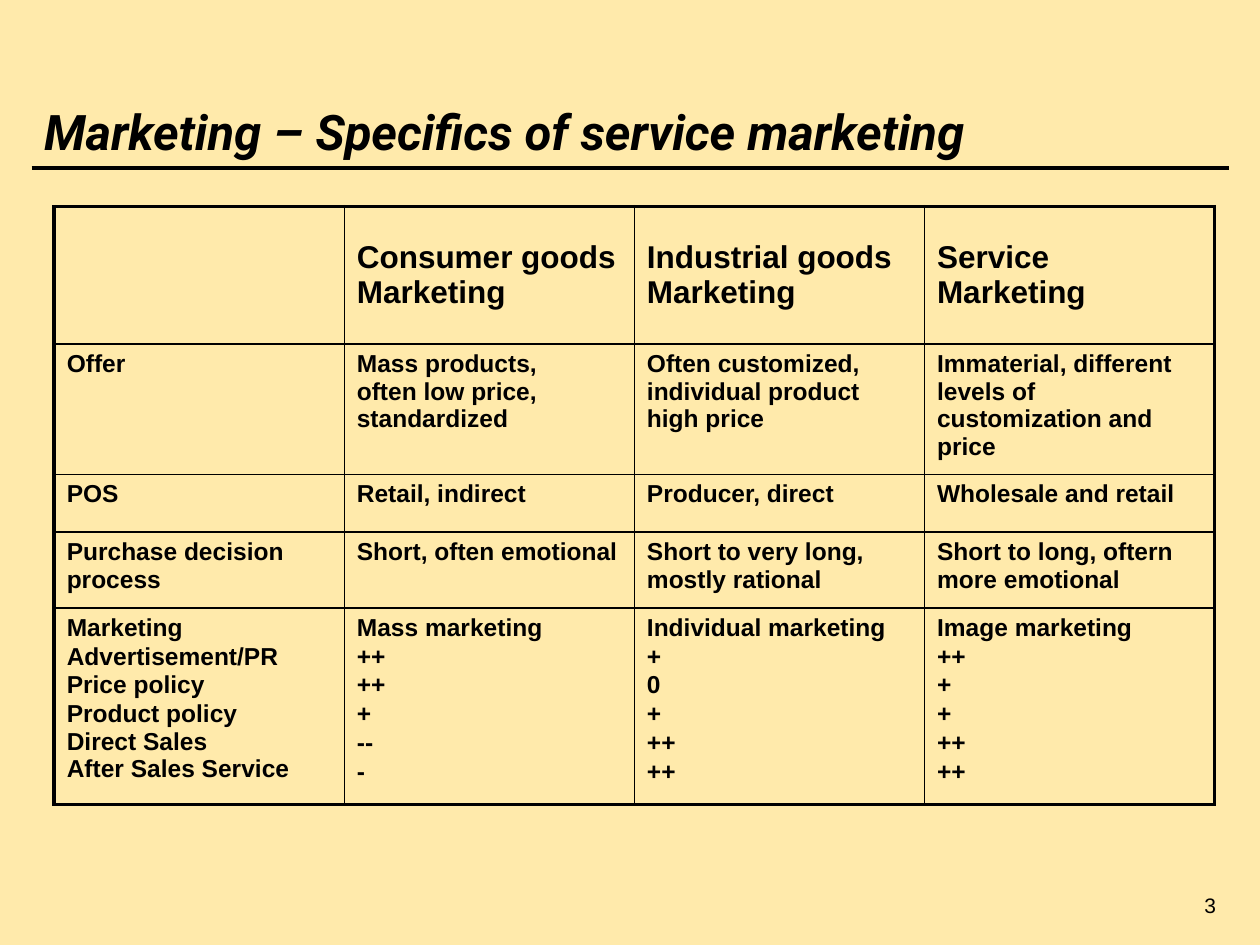
from lxml.etree import SubElement
from pptx import Presentation
from pptx.dml.color import RGBColor
from pptx.enum.shapes import MSO_CONNECTOR
from pptx.enum.text import MSO_ANCHOR, MSO_AUTO_SIZE, PP_ALIGN
from pptx.oxml.ns import qn
from pptx.util import Inches, Pt

BLACK = RGBColor(0x00, 0x00, 0x00)
CREAM = RGBColor(0xFF, 0xEA, 0xAB)
OUTER_WIDTH, INNER_WIDTH = Pt(2.25), Pt(1)

TITLE_FONT = {"name": "Roboto", "size": Pt(28), "bold": True, "italic": True}
HEADER_FONT = {"name": "Arial", "size": Pt(18), "bold": True}
BODY_FONT = {"name": "Arial", "size": Pt(14), "bold": True}
NUMBER_FONT = {"name": "Arial", "size": Pt(12), "bold": False}

ROW_HEIGHTS = [1.09, 0.72, 0.46, 0.6, 1.56]
# "\n" starts a paragraph, "\v" breaks a line inside one.
ROWS = [
    ["", "Consumer goods Marketing", "Industrial goods Marketing", "Service Marketing"],
    ["Offer",
     "Mass products, \voften low price, standardized",
     "Often customized,\vindividual product high price",
     "Immaterial, different levels of customization and price"],
    ["POS", "Retail, indirect", "Producer, direct", "Wholesale and retail"],
    ["Purchase decision process",
     "Short, often emotional",
     "Short to very long, mostly rational",
     "Short to long, oftern more emotional"],
    ["Marketing\nAdvertisement/PR\nPrice policy\n"
     "Product policy \vDirect Sales\vAfter Sales Service",
     "Mass marketing\n++\n++\n+\n--\n-",
     "Individual marketing\n+\n0\n+\n++\n++",
     "Image marketing\n++\n+\n+\n++\n++"],
]


def write_text(text_frame, text, font_format, space_share=0, alignment=PP_ALIGN.LEFT):
    """Fill a frame; space_share is the space before, as a share of the font size."""
    text_frame.text = text
    for paragraph in text_frame.paragraphs:
        paragraph.alignment = alignment
        paragraph.space_before = Pt(font_format["size"].pt * space_share)
        for run in paragraph.runs:
            run.font.color.rgb = BLACK
            for name, value in font_format.items():
                setattr(run.font, name, value)
        for line_break in paragraph._p.findall(qn("a:br")):
            size = int(font_format["size"].pt * 100)
            SubElement(line_break, qn("a:rPr"), sz=str(size))


def place_title(slide, box, text):
    title = slide.shapes.title
    title.left, title.top, title.width, title.height = box
    title.text_frame.auto_size = MSO_AUTO_SIZE.NONE
    title.text_frame.vertical_anchor = MSO_ANCHOR.MIDDLE
    write_text(title.text_frame, text, TITLE_FONT)


def place_rule(slide, left, right, top):
    rule = slide.shapes.add_connector(MSO_CONNECTOR.STRAIGHT, left, top, right, top)
    rule.line.color.rgb = BLACK
    rule.line.width = OUTER_WIDTH
    SubElement(rule._element.spPr, qn("a:effectLst"))


def set_borders(cell, widths):
    """Draw left, right, top and bottom borders, in that order."""
    properties = cell._tc.get_or_add_tcPr()
    for position, (side, width) in enumerate(zip("LRTB", widths)):
        border = SubElement(properties, qn(f"a:ln{side}"), w=str(width))
        fill = SubElement(border, qn("a:solidFill"))
        SubElement(fill, qn("a:srgbClr"), val=str(BLACK))
        properties.insert(position, border)


def place_comparison_table(slide, box):
    last_row, last_column = len(ROWS) - 1, len(ROWS[0]) - 1
    table = slide.shapes.add_table(last_row + 1, last_column + 1, *box).table
    table.first_row = table.horz_banding = False
    for column in table.columns:
        column.width = box[2] // (last_column + 1)
    for row, height in zip(table.rows, ROW_HEIGHTS):
        row.height = Inches(height)
    for row_index, texts in enumerate(ROWS):
        for column_index, text in enumerate(texts):
            cell = table.cell(row_index, column_index)
            cell.fill.background()
            on_edge = (column_index == 0, column_index == last_column,
                       row_index == 0, row_index == last_row)
            set_borders(cell, [OUTER_WIDTH if edge else INNER_WIDTH for edge in on_edge])
            if row_index == 0:
                cell.vertical_anchor = MSO_ANCHOR.MIDDLE
                cell.margin_top = cell.margin_bottom = Inches(0.06)
                write_text(cell.text_frame, text, HEADER_FONT, 0.2)
            else:
                write_text(cell.text_frame, text, BODY_FONT, 0.05)


def place_page_number(slide, box, text):
    text_frame = slide.shapes.add_textbox(*box).text_frame
    text_frame.word_wrap = True
    text_frame.vertical_anchor = MSO_ANCHOR.BOTTOM
    write_text(text_frame, text, NUMBER_FONT, alignment=PP_ALIGN.RIGHT)


def main():
    presentation = Presentation()
    presentation.slide_width, presentation.slide_height = Inches(10), Inches(7.5)
    slide = presentation.slides.add_slide(presentation.slide_layouts[5])
    slide.background.fill.solid()
    slide.background.fill.fore_color.rgb = CREAM

    def box(*lengths):
        return [Inches(length) for length in lengths]

    place_rule(slide, *box(0.25, 9.75, 1.33))
    place_page_number(slide, box(7.67, 6.83, 2.08, 0.5), "3")
    place_title(slide, box(0.25, 0.75, 9.44, 0.58),
                "Marketing – Specifics of service marketing")
    place_comparison_table(slide, box(0.43, 1.64, 9.21, sum(ROW_HEIGHTS)))
    presentation.save("out.pptx")


if __name__ == "__main__":
    main()
